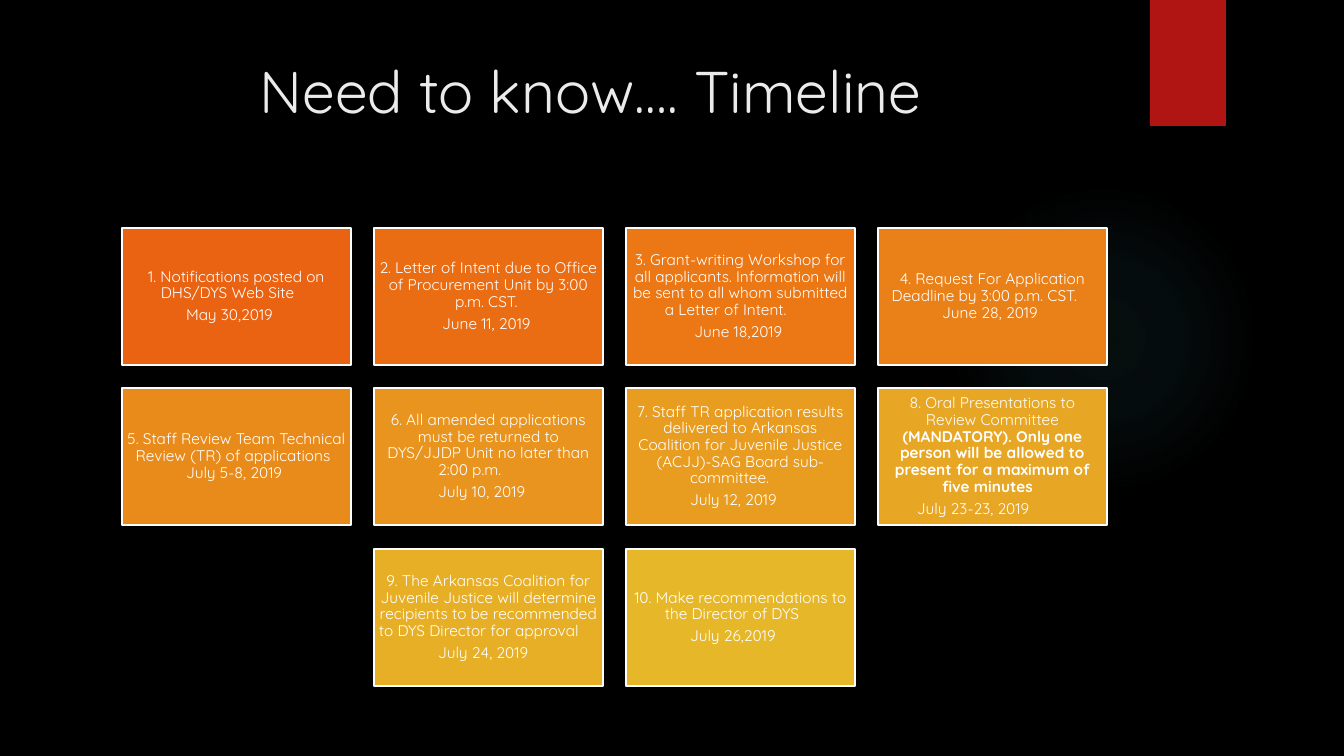
from lxml import etree
from pptx import Presentation
from pptx import util as u
from pptx.dml.color import RGBColor
from pptx.enum import shapes, text
from pptx.oxml import ns

BLACK = RGBColor(0x00, 0x00, 0x00)
WHITE = RGBColor(0xFF, 0xFF, 0xFF)
PALE = RGBColor(0xEB, 0xEB, 0xEB)
RED = RGBColor(0xB0, 0x15, 0x13)
TEAL = RGBColor(0x50, 0xB9, 0xC1)
FILLS = [RGBColor.from_string(c) for c in (
    "EA6312", "EB6D13", "EB7715", "EA8118", "E98B1B",
    "E9941E", "E89D21", "E7A623", "E7AF26", "E6B729")]
SCALE = 12192000 / 1344

# One entry per step, one string per paragraph; the part after "|" is bold.
# Tabs shift the centred lines.
STEPS = [
    ["1. Notifications posted on DHS/DYS Web Site \t", "May 30,2019 \t"],
    ["2. Letter of Intent due to Office of Procurement Unit by 3:00 p.m. CST. ",
     "June 11, 2019 "],
    ["3. Grant-writing Workshop for all applicants. Information will be sent "
     "to all whom submitted a Letter of Intent. \t", "June 18,2019 "],
    ["4. Request For Application Deadline by 3:00 p.m. CST. \tJune 28, 2019 \t"],
    ["5. Staff Review Team Technical Review (TR) of applications "
     "\tJuly 5-8, 2019 \t"],
    ["6. All amended applications must be returned to DYS/JJDP Unit no later "
     "than 2:00 p.m. \t", "July 10, 2019 \t"],
    ["7. Staff TR application results delivered to Arkansas Coalition for "
     "Juvenile Justice (ACJJ)-SAG Board sub-committee. \t", "July 12, 2019 \t"],
    ["8. Oral Presentations to Review Committee |(MANDATORY). Only one person "
     "will be allowed to present for a maximum of five minutes \t",
     "July 23-23, 2019 \t"],
    ["9. The Arkansas Coalition for Juvenile Justice will determine recipients "
     "to be recommended to DYS Director for approval \t", "July 24, 2019 \t"],
    ["10. Make recommendations to the Director of DYS \t", "July 26,2019 \t"],
]


def box(*px):
    return [u.Emu(round(n * SCALE)) for n in px]


def write(shape, lines, size, color, anchor, inset, space=1.0, after=0):
    frame = shape.text_frame
    frame.word_wrap = True
    frame.vertical_anchor = anchor
    side, top = box(*inset)
    frame.margin_left = frame.margin_right = side
    frame.margin_top = frame.margin_bottom = top
    for i, line in enumerate(lines):
        para = frame.paragraphs[0] if i == 0 else frame.add_paragraph()
        para.alignment = text.PP_ALIGN.CENTER
        para.line_spacing = space
        para.space_after = u.Pt(after)
        for j, part in enumerate(line.split("|")):
            run = para.add_run()
            run.text = part
            run.font.name = "Quicksand"
            run.font.size = u.Pt(size)
            run.font.bold = j == 1
            run.font.color.rgb = color


deck = Presentation()
deck.slide_width, deck.slide_height = box(1344, 756)
slide = deck.slides.add_slide(deck.slide_layouts[6])
slide.background.fill.solid()
slide.background.fill.fore_color.rgb = BLACK

# Faint glow on the right
glow = slide.shapes.add_shape(shapes.MSO_SHAPE.OVAL, *box(949, 184, 310, 310))
glow.shadow.inherit = False
glow.line.fill.background()
glow.fill.gradient()
stops = "".join(
    f'<a:gs pos="{pos * 1000}"><a:srgbClr val="{TEAL}">'
    f'<a:alpha val="{alpha * 1000}"/></a:srgbClr></a:gs>'
    for pos, alpha in ((0, 7), (36, 6), (69, 0)))
fade = etree.fromstring(
    f'<a:gradFill {ns.nsdecls("a")}><a:gsLst>{stops}</a:gsLst><a:path path="circle">'
    '<a:fillToRect l="50000" t="50000" r="50000" b="50000"/></a:path></a:gradFill>')
props = glow._element.spPr
props.replace(props.find(ns.qn("a:gradFill")), fade)

# Red tab at the top
tab = slide.shapes.add_shape(shapes.MSO_SHAPE.RECTANGLE, *box(1150, 0, 76, 126))
tab.shadow.inherit = False
tab.fill.solid()
tab.fill.fore_color.rgb = RED
tab.line.fill.background()

title = slide.shapes.add_textbox(*box(72, 50, 1037, 154))
write(title, ["Need to know…. Timeline"], 42, PALE, text.MSO_ANCHOR.TOP, (10, 5))

# Rows of four, with the last two steps centred below
for i, (lines, fill) in enumerate(zip(STEPS, FILLS)):
    row, col = divmod(i, 4)
    if row == 2:
        col += 1
    card = slide.shapes.add_shape(
        shapes.MSO_SHAPE.RECTANGLE,
        *box(122 + 252 * col, 228 + 321 * row // 2, 229, 137))
    card.shadow.inherit = False
    card.fill.solid()
    card.fill.fore_color.rgb = fill
    card.line.color.rgb = WHITE
    card.line.width = u.Pt(1.5)
    write(card, lines, 11, WHITE, text.MSO_ANCHOR.MIDDLE, (5, 5),
          space=0.9, after=3.85)

deck.save("out.pptx")
